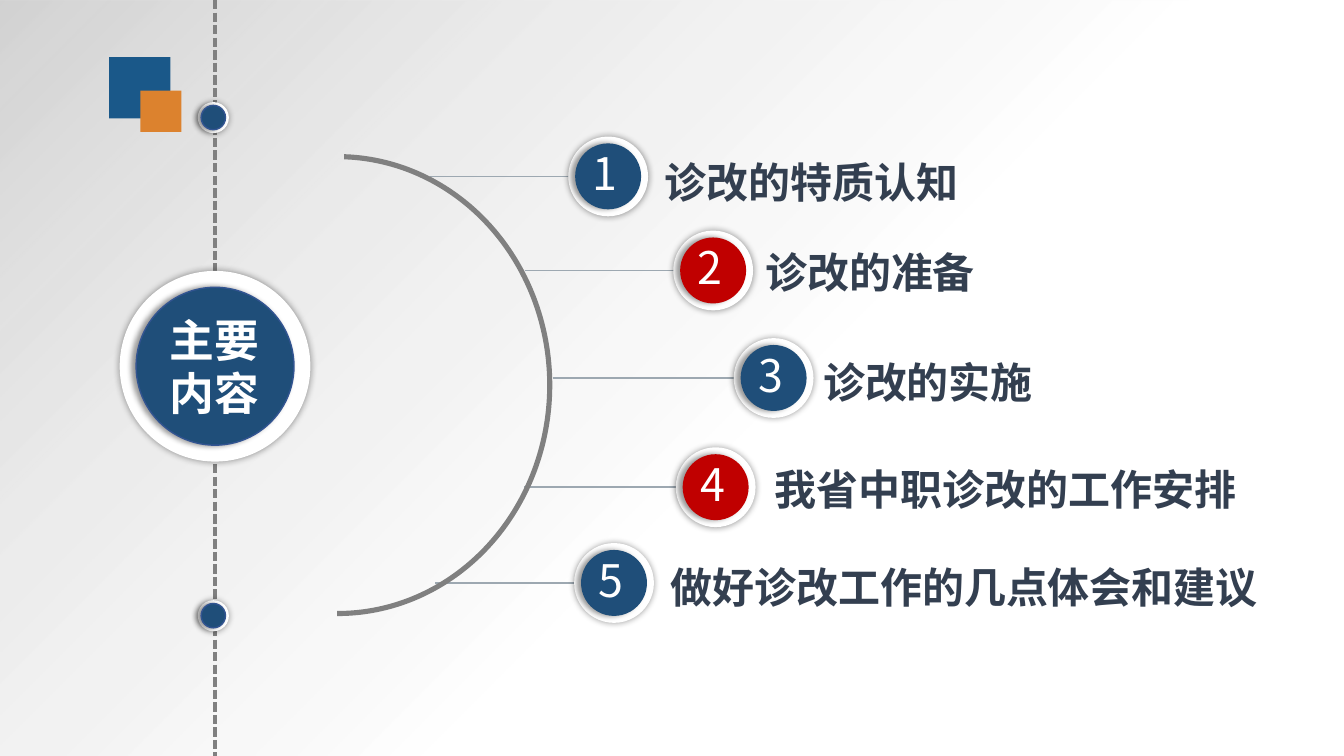
import pptx
import pptx.util
import pptx.dml.color
import pptx.enum.dml
import pptx.enum.shapes
import pptx.enum.text
import pptx.oxml
import pptx.oxml.ns

COLS, ROWS = 160, 90
FONT = "Noto Sans CJK SC"
COLORS = {
    "white": "FFFFFF", "navy": "1F4E79", "red": "C00000", "rim": "325491",
    "ink": "333F50", "gray": "808080", "thread": "9DA8B1",
    "blue": "1A5889", "orange": "DC822E",
}
RGB = {name: pptx.dml.color.RGBColor.from_string(c) for name, c in COLORS.items()}
NS = pptx.oxml.ns.nsdecls("a")
SHAPE = pptx.enum.shapes.MSO_SHAPE
ANCHOR = pptx.enum.text.MSO_ANCHOR
GROW = pptx.enum.text.MSO_AUTO_SIZE.SHAPE_TO_FIT_TEXT
STRAIGHT = pptx.enum.shapes.MSO_CONNECTOR.STRAIGHT

DIGIT = {"size": pptx.util.Pt(32), "name": FONT, "bold": False}
TITLE = {"size": pptx.util.Pt(32), "name": FONT, "bold": True}
LABEL = {"size": pptx.util.Pt(30), "name": FONT, "bold": True}

prs = pptx.Presentation()
prs.slide_width = pptx.util.Emu(12192000)
prs.slide_height = pptx.util.Emu(6858000)
cell = prs.slide_width // COLS
s = prs.slides.add_slide(prs.slide_layouts[6])


def add_shape(kind, box, fill, blur=0, dist=0, rim=None):
    sp = s.shapes.add_shape(kind, *(round(v * cell) for v in box))
    sp.fill.solid()
    sp.fill.fore_color.rgb = RGB[fill]
    if rim:
        sp.line.color.rgb = RGB[rim]
        sp.line.width = pptx.util.Pt(1)
    else:
        sp.line.fill.background()
    sp.shadow.inherit = False
    if blur:
        effects = sp._element.spPr.find(pptx.oxml.ns.qn("a:effectLst"))
        effects.append(pptx.oxml.parse_xml(
            f'<a:outerShdw {NS} blurRad="{blur * 12700}" dist="{dist * 12700}" dir="10800000" '
            'algn="ctr" rotWithShape="0"><a:srgbClr val="000000"><a:alpha val="40000"/>'
            '</a:srgbClr></a:outerShdw>'))
    return sp


def add_text(text, box, font, color, frame, spacing=1.0):
    tf = s.shapes.add_textbox(*(round(v * cell) for v in box)).text_frame
    for key, value in frame.items():
        setattr(tf, key, value)
    p = tf.paragraphs[0]
    p.line_spacing = spacing
    r = p.add_run()
    r.text = text
    for key, value in font.items():
        setattr(r.font, key, value)
    r.font.color.rgb = RGB[color]
    r._r.get_or_add_rPr().append(pptx.oxml.parse_xml(f'<a:ea {NS} typeface="{FONT}"/>'))


backdrop = add_shape(SHAPE.RECTANGLE, (0, 0, COLS, ROWS), "white")
stops = "".join(
    f'<a:gs pos="{pos}000"><a:srgbClr val="{c}"><a:alpha val="{alpha}000"/></a:srgbClr></a:gs>'
    for pos, c, alpha in [(0, "A6A6A6", 50), (27, "D6D6D6", 46), (57, "FFFFFF", 45)])
spPr = backdrop._element.spPr
spPr.replace(spPr.find(pptx.oxml.ns.qn("a:solidFill")), pptx.oxml.parse_xml(
    f'<a:gradFill {NS}><a:gsLst>{stops}</a:gsLst><a:lin ang="2700000" scaled="0"/></a:gradFill>'))

topics = [
    ("诊改的特质认知", 72.4, 21, "navy", 51.2, 25.2, (77.9, 14.8, 51.1, 12.4), 1.2),
    ("诊改的准备", 84.9, 32.2, "red", 62.5, 23.4, (89.9, 26.6, 40.8, 10.3), 1.2),
    ("诊改的实施", 92.1, 45, "navy", 65.8, 25.2, (96.8, 38.6, 56.3, 12.4), 1.2),
    ("我省中职诊改的工作安排", 85.2, 58, "red", 62.4, 25.2, (91, 54.5, 58, 7.3), 1.0),
    ("做好诊改工作的几点体会和建议", 73.1, 69.4, "navy", 51.8, 25.2, (78.6, 63.5, 73.9, 11.5), 1.2),
]

lines = [(x, y, x + length, y, "thread", 1) for _, _, y, _, x, length, _, _ in topics]
lines.append((25.6, 0, 25.6, ROWS, "gray", 2.25))
for x1, y1, x2, y2, color, width in lines:
    c = s.shapes.add_connector(STRAIGHT, *(round(v * cell) for v in (x1, y1, x2, y2)))
    c.line.color.rgb = RGB[color]
    c.line.width = pptx.util.Pt(width)
    if color == "gray":
        c.line.dash_style = pptx.enum.dml.MSO_LINE.SQUARE_DOT
    c._element.spPr.append(pptx.oxml.parse_xml(f"<a:effectLst {NS}/>"))

arc = add_shape(SHAPE.BLOCK_ARC, (12.7, 20.3, 55, 51.1), "gray")
arc.rotation = 90
for i, value in enumerate((108.972, 0.07, 0.012)):
    arc.adjustments[i] = value

discs = [(x, y, 9.5, 7.85, fill, None) for _, x, y, fill, *_ in topics]
discs += [
    (25.4, 14, 3.7, 2.9, "navy", "rim"),
    (25.6, 43.6, 22.7, 18.8, "navy", "rim"),
    (25.4, 73.3, 3.7, 2.9, "navy", "rim"),
]
for x, y, outer, inner, fill, rim in discs:
    add_shape(SHAPE.OVAL, (x - outer / 2, y - outer / 2, outer, outer), "white", 5)
    add_shape(SHAPE.OVAL, (x - inner / 2, y - inner / 2, inner, inner), fill, 4, 3, rim)

growing = {"word_wrap": True, "auto_size": GROW}
centred = {"word_wrap": True, "vertical_anchor": ANCHOR.MIDDLE}
for number, (label, x, y, _, _, _, box, spacing) in enumerate(topics, 1):
    add_text(str(number), (x - 3, y - 4.2, 4.3, 7.7), DIGIT, "white", growing)
    add_text(label, box, LABEL, "ink", centred, spacing)
add_text("主要内容", (19, 36.6, 13.3, 14.2), TITLE, "white", growing)

add_shape(SHAPE.RECTANGLE, (13, 6.8, 7.3, 7.3), "blue")
add_shape(SHAPE.RECTANGLE, (16.7, 10.8, 4.9, 4.9), "orange")

prs.save("out.pptx")
